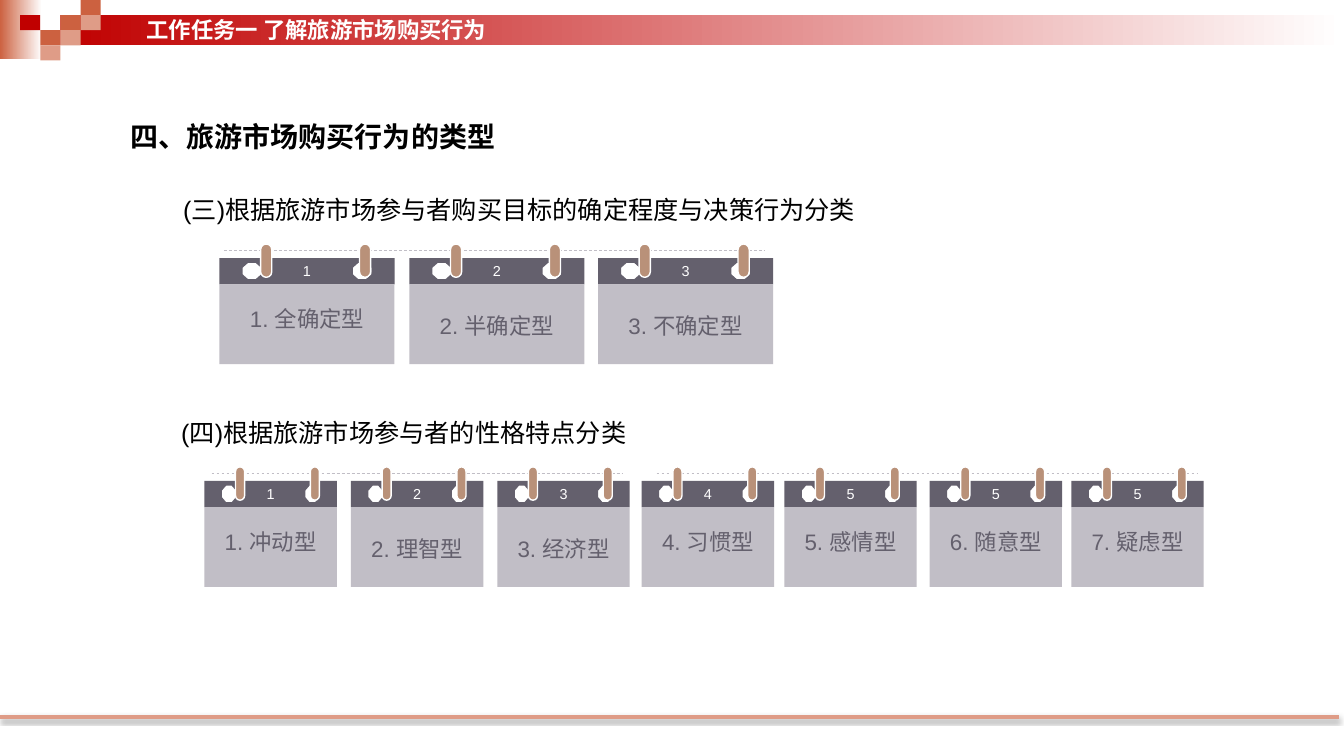
from dataclasses import dataclass
from math import cos, pi, sin

from lxml import etree
from pptx import Presentation
from pptx import util as u
from pptx.dml.color import RGBColor
from pptx.enum import dml, shapes, text
from pptx.oxml.ns import qn

WHITE = RGBColor(0xFF, 0xFF, 0xFF)
BLACK = RGBColor(0x00, 0x00, 0x00)
RED = RGBColor(0xC0, 0x00, 0x00)
RUST = RGBColor(0xCC, 0x61, 0x40)
SALMON = RGBColor(0xDF, 0x9C, 0x87)
SLATE = RGBColor(0x64, 0x60, 0x6D)
GREY = RGBColor(0xC1, 0xBE, 0xC6)
TAN = RGBColor(0xB9, 0x91, 0x79)

TILE_W, TILE_H = 14.4, 10.8
HEADER_H, BODY_H = 18.8, 57
HOLE_CENTRES = (0.815, 0.185)  # shares of the card width
RING_LEFTS = (0.235, 0.8)


@dataclass
class Tile:
    column: int
    row: int
    color: RGBColor


@dataclass
class Card:
    left: float
    number: str
    label: str
    spacing: float = 1.0


@dataclass
class CardRow:
    top: float
    width: float
    ring_width: float
    dashes: list[tuple[float, float]]
    cards: list[Card]


@dataclass
class Caption:
    left: float
    top: float
    width: float
    height: float
    words: str
    size: float
    color: RGBColor = BLACK
    font: str = "Arial"
    bold: bool = False


TILES = [
    Tile(3, 1, RUST), Tile(4, 0, RUST), Tile(4, 1, SALMON), Tile(2, 2, RUST),
    Tile(1, 1, RED), Tile(3, 2, SALMON), Tile(2, 3, SALMON),
]

CAPTIONS = [
    Caption(86.2, 81.8, 409, 31, "四、旅游市场购买行为的类型", 20,
            font="Noto Sans CJK SC", bold=True),
    Caption(97.6, 7.9, 371.5, 26.6, "工作任务一 了解旅游市场购买行为", 16, WHITE, bold=True),
    Caption(123.8, 135.4, 510.5, 29, "(三)根据旅游市场参与者购买目标的确定程度与决策行为分类", 18),
    Caption(122.4, 294.5, 357, 29, "(四)根据旅游市场参与者的性格特点分类", 18),
]

CARD_ROWS = [
    CardRow(184.3, 125, 8, [(160, 546.5)], [
        Card(156.8, "1", "1. 全确定型"),
        Card(292.4, "2", "2. 半确定型", 1.5),
        Card(427.2, "3", "3. 不确定型", 1.5),
    ]),
    CardRow(343.5, 94.6, 6.5, [(469, 855.4), (151.2, 445)], [
        Card(146, "1", "1. 冲动型"),
        Card(250.7, "2", "2. 理智型", 1.5),
        Card(355.2, "3", "3. 经济型", 1.5),
        Card(458.4, "4", "4. 习惯型"),
        Card(560.2, "5", "5. 感情型"),
        Card(664, "5", "6. 随意型"),
        Card(765.2, "5", "7. 疑虑型"),
    ]),
]


def add_box(slide, kind, left: float, top: float, width: float, height: float, color=None):
    sp = slide.shapes.add_shape(kind, u.Pt(left), u.Pt(top), u.Pt(width), u.Pt(height))
    sp.shadow.inherit = False
    sp.line.fill.background()
    if color is not None:
        sp.fill.solid()
        sp.fill.fore_color.rgb = color
    return sp


def add_fade(slide, left: float, top: float, width: float, height: float, color: RGBColor) -> None:
    """Add a rectangle fading from the colour to white, left to right."""
    sp = add_box(slide, shapes.MSO_SHAPE.RECTANGLE, left, top, width, height)
    sp.fill.gradient()
    sp.fill.gradient_angle = 0
    for stop, rgb in zip(sp.fill.gradient_stops, (color, WHITE)):
        stop.color.rgb = rgb


def add_rule(slide, x1: float, x2: float, y: float, color: RGBColor, weight: float):
    """Add a horizontal line and return it with its empty effect list."""
    line = slide.shapes.add_connector(
        shapes.MSO_CONNECTOR.STRAIGHT, u.Pt(x1), u.Pt(y), u.Pt(x2), u.Pt(y))
    line.line.color.rgb = color
    line.line.width = u.Pt(weight)
    effects = etree.SubElement(line._element.spPr, qn("a:effectLst"))
    return line, effects


def add_footer_rule(slide) -> None:
    _, effects = add_rule(slide, 0, 956.3, 512, SALMON, 3)
    shadow = etree.SubElement(effects, qn("a:outerShdw"), blurRad=str(u.Pt(3.1)),
                              dist=str(u.Pt(1.8)), dir="5400000", rotWithShape="0")
    black = etree.SubElement(shadow, qn("a:srgbClr"), val=str(BLACK))
    etree.SubElement(black, qn("a:alpha"), val="35000")


def add_caption(slide, caption: Caption) -> None:
    box = slide.shapes.add_textbox(u.Pt(caption.left), u.Pt(caption.top),
                                   u.Pt(caption.width), u.Pt(caption.height))
    tf = box.text_frame
    tf.word_wrap = True
    tf.auto_size = text.MSO_AUTO_SIZE.SHAPE_TO_FIT_TEXT
    p = tf.paragraphs[0]
    p.text = caption.words
    p.font.name, p.font.size = caption.font, u.Pt(caption.size)
    p.font.bold, p.font.color.rgb = caption.bold, caption.color


def write_centred(sp, words: str, size: float, color: RGBColor, spacing: float = 1.0) -> None:
    tf = sp.text_frame
    tf.word_wrap = True
    tf.vertical_anchor = text.MSO_ANCHOR.MIDDLE
    p = tf.paragraphs[0]
    p.text = words
    p.alignment = text.PP_ALIGN.CENTER
    p.line_spacing = spacing
    p.font.name, p.font.size, p.font.color.rgb = "Arial", u.Pt(size), color


def ellipse(cx: float, cy: float, rx: float, ry: float, steps: int = 8) -> list[tuple[int, int]]:
    angles = [2 * pi * (i + 0.5) / steps for i in range(steps)]
    return [(u.Pt(cx + rx * cos(a)), u.Pt(cy + ry * sin(a))) for a in angles]


def add_header(slide, left: float, top: float, width: float):
    """Add the dark card header with two punched holes."""
    right, bottom = left + width, top + HEADER_H
    frame = [(u.Pt(x), u.Pt(y)) for x, y in
             ((left, top), (right, top), (right, bottom), (left, bottom))]
    builder = slide.shapes.build_freeform(*frame[0])
    builder.add_line_segments(frame[1:], close=True)
    for centre in HOLE_CENTRES:
        hole = ellipse(left + width * centre, top + 9.3, width * 0.057, 6.3)
        builder.move_to(*hole[0])
        builder.add_line_segments(hole[1:], close=True)
    sp = builder.convert_to_shape()
    sp.shadow.inherit = False
    sp.fill.solid()
    sp.fill.fore_color.rgb = SLATE
    sp.line.fill.background()
    return sp


def add_card(slide, row: CardRow, card: Card) -> None:
    write_centred(add_header(slide, card.left, row.top, row.width), card.number, 10.3, WHITE)
    body = add_box(slide, shapes.MSO_SHAPE.RECTANGLE, card.left, row.top + HEADER_H,
                   row.width, BODY_H, GREY)
    write_centred(body, card.label, 16, SLATE, card.spacing)
    body.text_frame.margin_bottom = u.Pt(11.5)
    for share in RING_LEFTS:
        ring = add_box(slide, shapes.MSO_SHAPE.ROUNDED_RECTANGLE, card.left + row.width * share,
                       row.top - 10, row.ring_width, 23.8, TAN)
        ring.adjustments[0] = 0.5
        ring.line.color.rgb = WHITE
        ring.line.width = u.Pt(1)


def main() -> None:
    prs = Presentation()
    prs.slide_width, prs.slide_height = u.Pt(960), u.Pt(540)
    s = prs.slides.add_slide(prs.slide_layouts[6])
    add_fade(s, 0, 0, 30, 42, RUST)
    add_fade(s, 43.2, 10.8, 916.8, 21.6, RED)
    for tile in TILES:
        add_box(s, shapes.MSO_SHAPE.RECTANGLE, tile.column * TILE_W, tile.row * TILE_H,
                TILE_W, TILE_H, tile.color)
    add_footer_rule(s)
    for caption in CAPTIONS:
        add_caption(s, caption)
    for row in CARD_ROWS:
        for x1, x2 in row.dashes:
            line, _ = add_rule(s, x1, x2, row.top - 5.7, GREY, 0.5)
            line.line.dash_style = dml.MSO_LINE.DASH
        for card in row.cards:
            add_card(s, row, card)
    prs.save("out.pptx")


if __name__ == "__main__":
    main()
